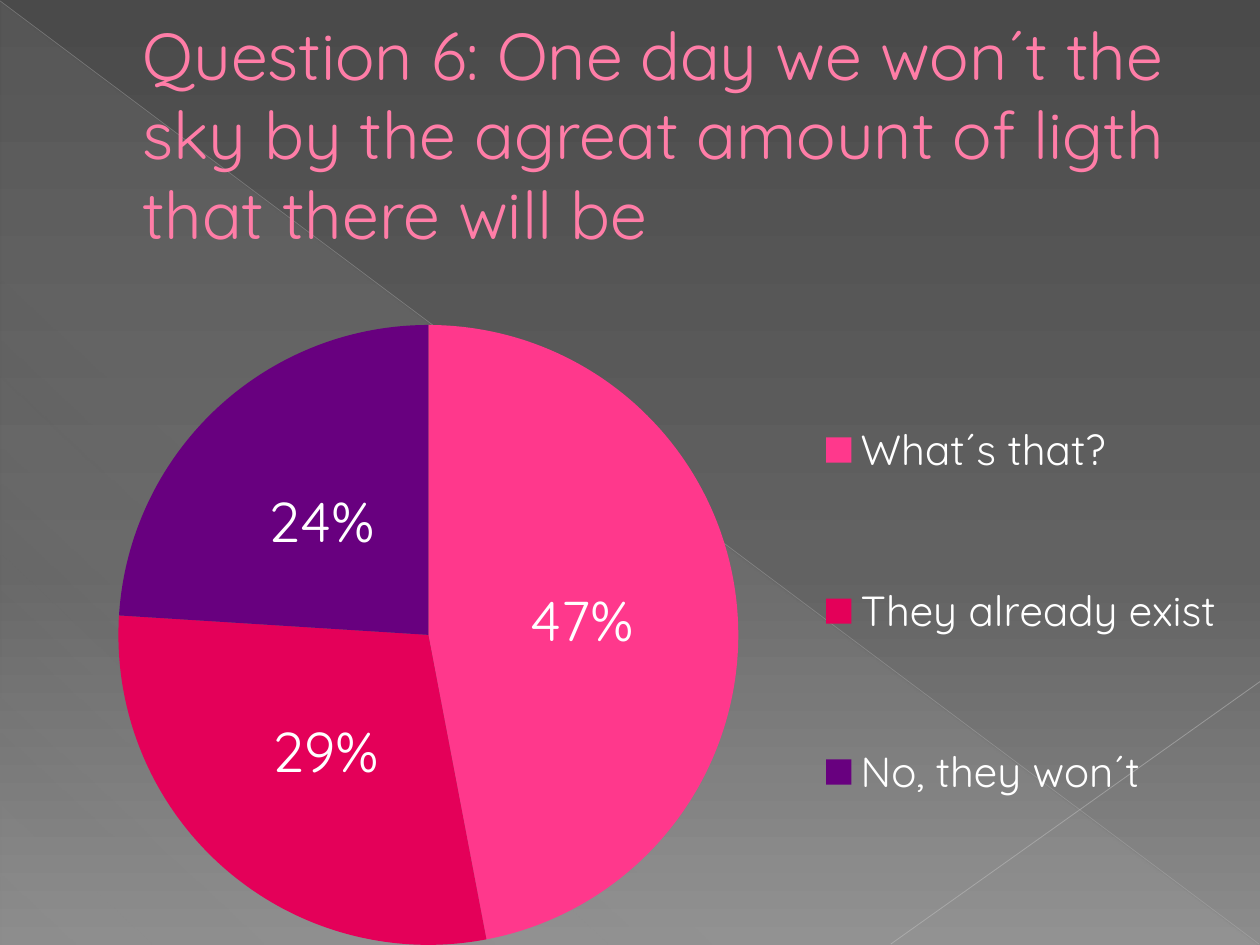
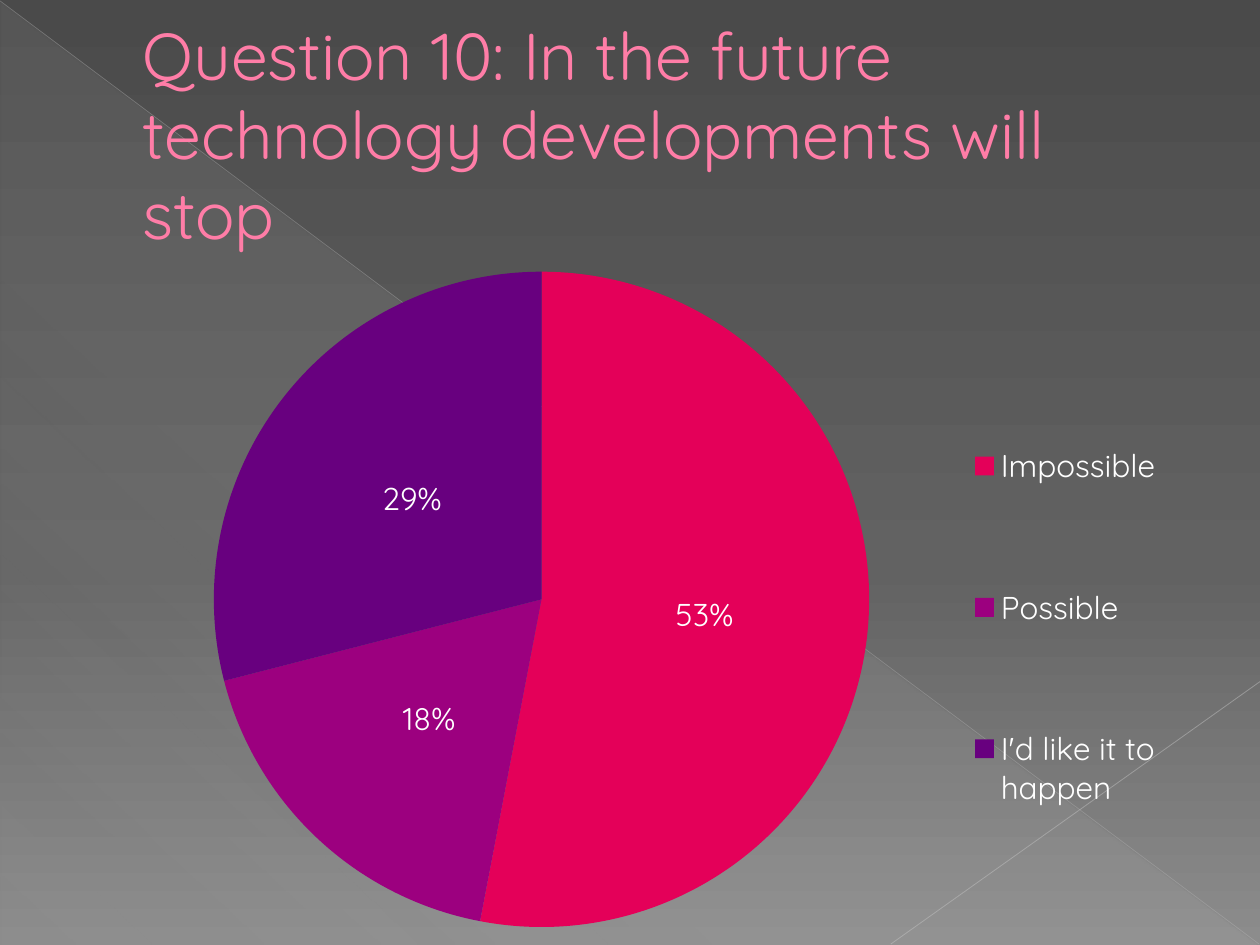
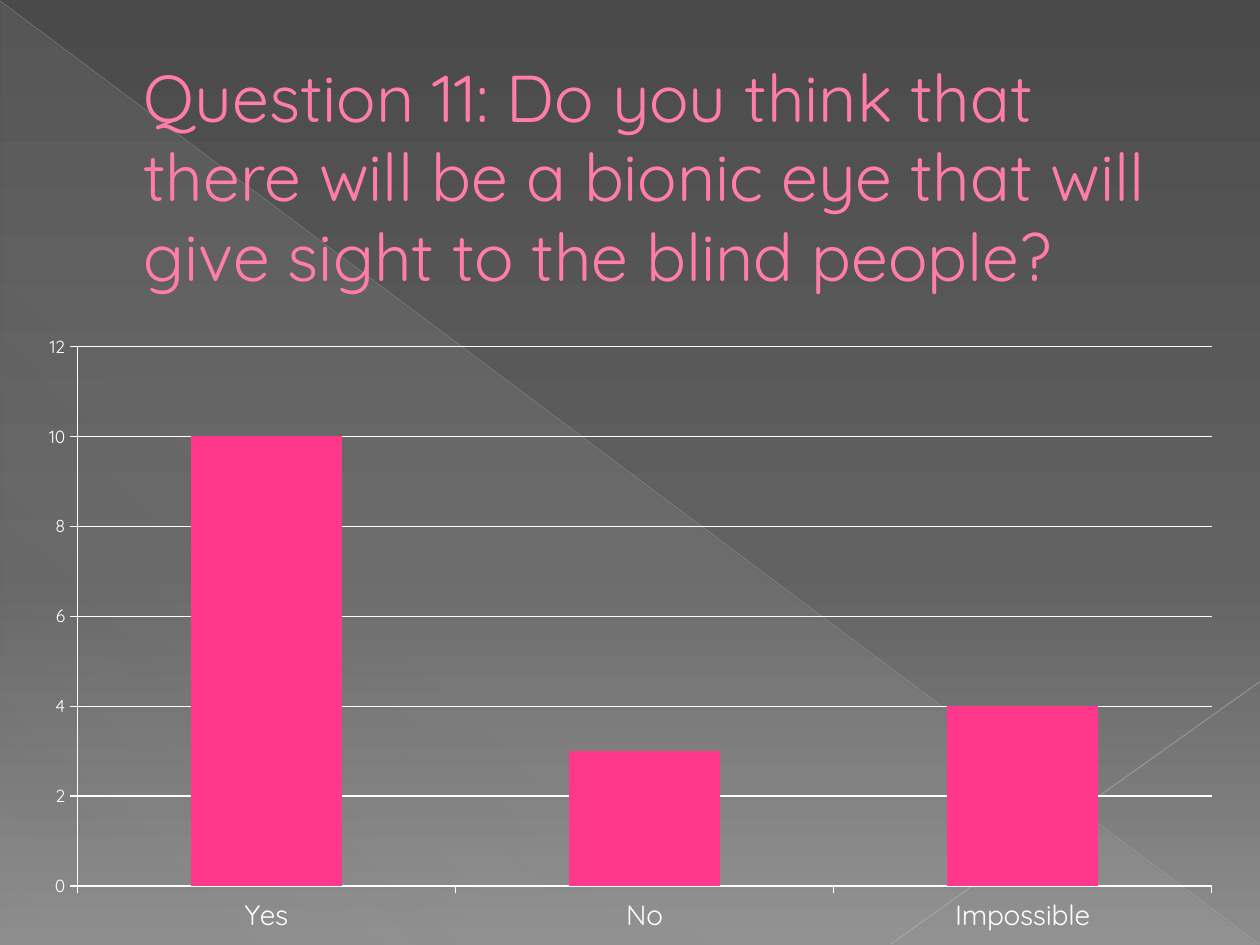
"""Builds three survey result slides with pie and column charts."""
from lxml.etree import SubElement
from pptx import Presentation
from pptx.chart.data import CategoryChartData
from pptx.dml.color import RGBColor
from pptx.enum.chart import XL_CHART_TYPE as ChartType
from pptx.enum.chart import XL_LABEL_POSITION as LabelPosition
from pptx.enum.chart import XL_LEGEND_POSITION as LegendPosition
from pptx.enum.chart import XL_TICK_MARK as TickMark
from pptx.enum.shapes import MSO_CONNECTOR as Connector
from pptx.enum.shapes import MSO_SHAPE as Shape
from pptx.enum.text import MSO_ANCHOR as Anchor
from pptx.enum.text import MSO_AUTO_SIZE as AutoSize
from pptx.enum.text import PP_ALIGN as Align
from pptx.oxml.ns import qn
from pptx.util import Pt

FONT = "Quicksand"
COLORS = {
    "text": "FFFFFF", "title": "FF7DA7", "title_outline": "B12761",
    "sky_top": "4A4A4A", "sky_middle": "626262", "sky_bottom": "8C8C8C",
    "veil": "D2D2D2", "long_line": "BFBFBF", "short_line": "C6C6C6",
    "pink": "FF388C", "red": "E40059", "plum": "9C007F", "violet": "68007F",
}
SLICES = ("pink", "red", "plum", "violet")
BACKDROP = [(0, "sky_top", 100), (60, "sky_middle", 100), (100, "sky_bottom", 100)]
VEIL = [(0, "veil", 10), (70, "veil", 8), (100, "veil", 1)]


class SurveyDeck:
    """Holds the shared style, the presentation and the current slide."""

    def __init__(self):
        """Open an empty 4:3 presentation."""
        self.deck = Presentation()
        self.deck.slide_width, self.deck.slide_height = Pt(720), Pt(540)
        self.page = None

    def color(self, name):
        """Return a named colour."""
        return RGBColor.from_string(COLORS[name])

    def style_font(self, font, size, color="text"):
        """Set the shared typeface with a size and a colour."""
        font.name, font.size, font.bold = FONT, Pt(size), False
        font.color.rgb = self.color(color)

    def add_color(self, parent, name, opacity=100):
        """Append a colour element with its opacity in percent."""
        tint = SubElement(parent, qn("a:srgbClr"), val=COLORS[name])
        if opacity < 100:
            SubElement(tint, qn("a:alpha"), val=str(opacity * 1000))

    def gradient(self, fill, owner, stops, angle):
        """Fill with a linear gradient of (percent, colour, opacity) stops."""
        fill.gradient()
        gradient = owner.element.find(".//" + qn("a:gradFill"))
        stop_list = gradient.find(qn("a:gsLst"))
        for old_stop in list(stop_list):
            stop_list.remove(old_stop)
        for percent, name, opacity in stops:
            stop = SubElement(stop_list, qn("a:gs"), pos=str(percent * 1000))
            self.add_color(stop, name, opacity)
        gradient.find(qn("a:lin")).set("ang", str(angle * 60000))

    def line(self, start, end, color, width, opacity):
        """Draw a thin translucent straight line."""
        points = [Pt(value) for value in (*start, *end)]
        line = self.page.shapes.add_connector(Connector.STRAIGHT, *points)
        line.line.width = Pt(width)
        line.line.color.rgb = self.color(color)
        tint = line.element.find(".//" + qn("a:srgbClr"))
        SubElement(tint, qn("a:alpha"), val=str(opacity * 1000))
        SubElement(line.element.spPr, qn("a:effectLst"))

    def slide(self, title, left, top, width, height):
        """Start a slide with the shared backdrop and a title."""
        self.page = self.deck.slides.add_slide(self.deck.slide_layouts[5])
        self.gradient(self.page.background.fill, self.page, BACKDROP, 90)
        veil = self.page.shapes.add_shape(
            Shape.RIGHT_TRIANGLE, Pt(0.5), Pt(1.2), Pt(718.8), Pt(538.8))
        veil.shadow.inherit = False
        veil.line.fill.background()
        self.gradient(veil.fill, veil, VEIL, 133)
        self.line((0, 0.5), (719.5, 539.5), "long_line", 0.39, 35)
        self.line((720, 389.5), (509, 539.5), "short_line", 0.47, 45)
        self.title(title, left, top, width, height)

    def title(self, text, left, top, width, height):
        """Place and format the title in front of the backdrop."""
        box = self.page.shapes.title
        box.element.getparent().append(box.element)
        box.left, box.top, box.width, box.height = map(Pt, (left, top, width, height))
        frame = box.text_frame
        frame.word_wrap, frame.auto_size = True, AutoSize.NONE
        frame.vertical_anchor = Anchor.MIDDLE
        para = frame.paragraphs[0]
        para.alignment = Align.LEFT
        properties = para._p.get_or_add_pPr()
        properties.set("marL", str(Pt(38)))
        properties.set("indent", "0")
        span = para.add_run()
        span.text = text
        self.style_font(span.font, 37.8, "title")
        outline = SubElement(span._r.get_or_add_rPr(), qn("a:ln"), w=str(Pt(0.5)))
        self.add_color(SubElement(outline, qn("a:solidFill")), "title_outline")
        span._r.get_or_add_rPr().insert(0, outline)

    def chart(self, kind, frame, categories, values):
        """Add a one-series chart in the shared font."""
        data = CategoryChartData()
        data.categories = categories
        data.add_series("Series 1", values)
        chart = self.page.shapes.add_chart(kind, *map(Pt, frame), data).chart
        chart.has_title = chart.has_legend = False
        self.style_font(chart.font, 10)
        return chart

    def pie(self, frame, categories, values, label_size, legend_size,
            plot_area, legend_area):
        """Add a pie with percent labels and a legend that skips empty slices."""
        chart = self.chart(ChartType.PIE, frame, categories, values)
        plot = chart.plots[0]
        plot.vary_by_categories = True
        for index, name in enumerate(SLICES):
            fill = plot.series[0].points[index].format.fill
            fill.solid()
            fill.fore_color.rgb = self.color(name)
        plot.has_data_labels = True
        labels = plot.data_labels
        labels.show_percentage, labels.show_value = True, False
        labels.number_format, labels.number_format_is_linked = "0%", False
        labels.position = LabelPosition.CENTER
        self.style_font(labels.font, label_size)
        chart.has_legend = True
        chart.legend.position = LegendPosition.RIGHT
        chart.legend.include_in_layout = False
        self.style_font(chart.legend.font, legend_size)
        legend = chart.element.find(".//" + qn("c:legend"))
        entry = self.hide_legend_entry(legend, values.index(None))
        entry.addnext(self.fixed_layout(legend, legend_area))
        area = chart.element.find(".//" + qn("c:plotArea"))
        area.insert(0, self.fixed_layout(area, plot_area, "inner"))

    def hide_legend_entry(self, legend, index):
        """Leave one category out of the legend and return its entry."""
        entry = SubElement(legend, qn("c:legendEntry"))
        SubElement(entry, qn("c:idx"), val=str(index))
        SubElement(entry, qn("c:delete"), val="1")
        legend.find(qn("c:legendPos")).addnext(entry)
        return entry

    def fixed_layout(self, parent, area, target=None):
        """Replace the layout of a chart part by percentages of the chart."""
        for old_layout in parent.findall(qn("c:layout")):
            parent.remove(old_layout)
        layout = SubElement(parent, qn("c:layout"))
        manual = SubElement(layout, qn("c:manualLayout"))
        settings = [("layoutTarget", target)] if target else []
        settings += [("xMode", "edge"), ("yMode", "edge")]
        settings += [(side, round(value / 100, 3)) for side, value in zip("xywh", area)]
        for tag, value in settings:
            SubElement(manual, qn("c:" + tag), val=str(value))
        return layout

    def columns(self, frame, categories, values):
        """Add a column chart with white axes and gridlines."""
        chart = self.chart(ChartType.COLUMN_CLUSTERED, frame, categories, values)
        plot = chart.plots[0]
        plot.gap_width, plot.vary_by_categories = 150, False
        fill = plot.series[0].format.fill
        fill.solid()
        fill.fore_color.rgb = self.color("pink")
        value_axis, category_axis = chart.value_axis, chart.category_axis
        value_axis.minimum_scale, value_axis.maximum_scale = 0, 12
        value_axis.major_unit = 2
        value_axis.has_major_gridlines = True
        for axis, size in ((value_axis, 10), (category_axis, 16)):
            axis.major_tick_mark = TickMark.OUTSIDE
            self.style_font(axis.tick_labels.font, size)
        for part in (value_axis, category_axis, value_axis.major_gridlines):
            part.format.line.color.rgb = self.color("text")
            part.format.line.width = Pt(0.75)


def main():
    """Build the three slides and save them."""
    survey = SurveyDeck()
    survey.slide("Question 6: One day we won´t the sky by the agreat amount of "
                 "ligth that there will be", 36, 21.2, 648, 110)
    survey.pie((0, 145.5, 705.5, 394.5),
               ["What´s that?", "They already exist", "", "No, they won´t"],
               [47, 29, None, 24], 32, 24,
               (2.8, 10.2, 63.8, 89.8), (66.2, 8.8, 33, 85.7))

    question = "Question 10: In the future technology developments will stop"
    survey.slide(question, 36, 21.2, 648, 110)
    survey.pie((20, 145.5, 700, 394.5),
               [question, "Impossible", "Possible", "I'd like it to happen"],
               [None, 53, 18, 29], 18, 18,
               (14.6, 2.4, 53.5, 95.1), (74.1, 13, 20, 81.9))

    survey.slide("Question 11: Do you think that there will be a bionic eye that "
                 "will give sight to the blind people?", 36.7, 54.6, 648, 91)
    survey.columns((14.2, 185, 692, 355), ["Yes", "No", "Impossible"], [10, 3, 4])
    survey.deck.save("out.pptx")


if __name__ == "__main__":
    main()
